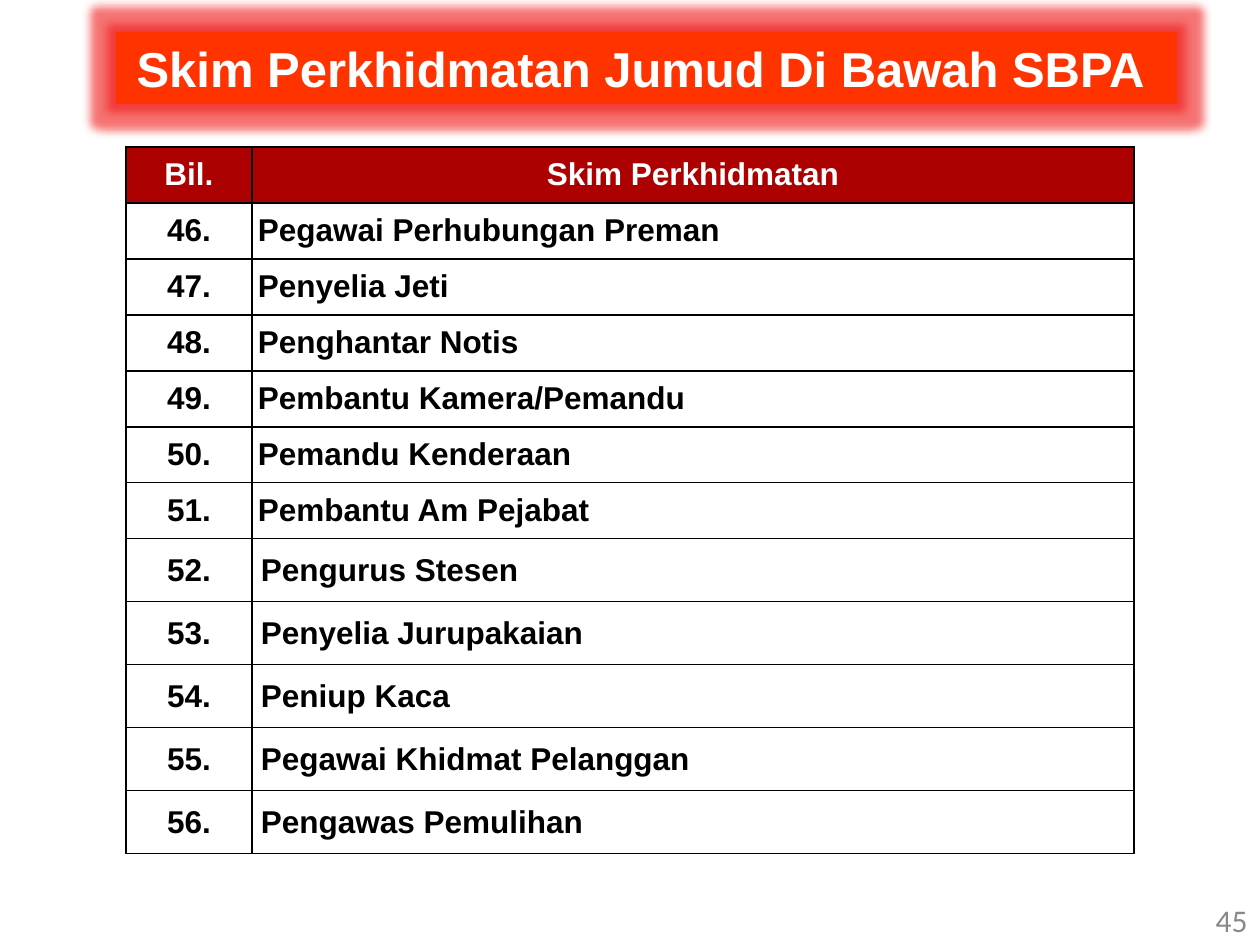
from lxml import etree
from pptx import Presentation
from pptx import util as u
from pptx.dml.color import RGBColor
from pptx.enum import shapes, text
from pptx.oxml import parse_xml
from pptx.oxml.ns import nsdecls, qn

TITLE = "Skim Perkhidmatan Jumud Di Bawah SBPA "
HEADINGS = ("Bil.", "Skim Perkhidmatan")
FIRST_NUMBER = 46
SHORT_ROWS = [
    "Pegawai Perhubungan Preman", "Penyelia Jeti", "Penghantar Notis",
    "Pembantu Kamera/Pemandu", "Pemandu Kenderaan", "Pembantu Am Pejabat",
]
TALL_ROWS = [
    "Pengurus Stesen", "Penyelia Jurupakaian", "Peniup Kaca",
    "Pegawai Khidmat Pelanggan", "Pengawas Pemulihan",
]
PAGE_NUMBER = "45"

PX_PER_INCH = 126
COLUMN_WIDTHS = (126, 882)
SHORT_HEIGHT, TALL_HEIGHT = 56, 63
STANDARD_MARGINS = (13, 6)
SHORT_MARGINS = (6, 9)
TALL_MARGINS = (9, 13)
CENTER, LEFT, RIGHT = text.PP_ALIGN.CENTER, text.PP_ALIGN.LEFT, text.PP_ALIGN.RIGHT


def px(count):
    return u.Emu(round(count * 914400 / PX_PER_INCH))


def color(hex_code):
    return RGBColor.from_string(hex_code)


def write(frame, words, size, hex_code, align, font="Arial", bold=True):
    frame.text = words
    para = frame.paragraphs[0]
    para.alignment = align
    for span in para.runs:
        span.font.name = font
        span.font.size = u.Pt(size)
        span.font.bold = bold
        span.font.color.rgb = color(hex_code)


def add_borders(cell):
    properties = cell._tc.get_or_add_tcPr()
    for index, side in enumerate(("lnL", "lnR", "lnT", "lnB")):
        properties.insert(index, parse_xml(
            f'<a:{side} {nsdecls("a")} w="12700"><a:solidFill>'
            f'<a:srgbClr val="000000"/></a:solidFill></a:{side}>'))


def fill_cell(cell, words, fill, ink, align, margins):
    write(cell.text_frame, words, 18, ink, align)
    cell.vertical_anchor = text.MSO_ANCHOR.MIDDLE
    cell.margin_left = cell.margin_right = px(margins[0])
    cell.margin_top = cell.margin_bottom = px(margins[1])
    cell.fill.solid()
    cell.fill.fore_color.rgb = color(fill)
    add_borders(cell)


def add_scheme_table(page):
    rows = [(name, SHORT_HEIGHT, SHORT_MARGINS) for name in SHORT_ROWS]
    rows += [(name, TALL_HEIGHT, TALL_MARGINS) for name in TALL_ROWS]
    total = SHORT_HEIGHT + sum(height for _, height, _ in rows)
    table = page.shapes.add_table(len(rows) + 1, 2, px(126), px(147),
                                  px(sum(COLUMN_WIDTHS)), px(total)).table
    for column, width in zip(table.columns, COLUMN_WIDTHS):
        column.width = px(width)
    table.rows[0].height = px(SHORT_HEIGHT)
    for index, heading in enumerate(HEADINGS):
        fill_cell(table.cell(0, index), heading, "AD0000", "FFFFFF", CENTER,
                  STANDARD_MARGINS)
    for index, (name, height, margins) in enumerate(rows, start=1):
        table.rows[index].height = px(height)
        number = f"{FIRST_NUMBER + index - 1}."
        fill_cell(table.cell(index, 0), number, "FFFFFF", "000000", CENTER,
                  STANDARD_MARGINS)
        fill_cell(table.cell(index, 1), name, "FFFFFF", "000000", LEFT, margins)


def add_glow(shape, hex_code, radius, opacity):
    effects = shape._element.spPr.find(qn("a:effectLst"))
    glow = etree.SubElement(effects, qn("a:glow"), rad=str(px(radius)))
    tint = etree.SubElement(glow, qn("a:srgbClr"), val=hex_code)
    etree.SubElement(tint, qn("a:alpha"), val=str(opacity * 1000))


def add_title(page):
    banner = page.shapes.add_shape(shapes.MSO_SHAPE.RECTANGLE,
                                   px(116), px(32), px(1061), px(72))
    banner.shadow.inherit = False
    banner.fill.solid()
    banner.fill.fore_color.rgb = color("FF3300")
    banner.line.fill.background()
    add_glow(banner, "F01818", 18, 60)
    frame = banner.text_frame
    frame.word_wrap = True
    frame.vertical_anchor = text.MSO_ANCHOR.MIDDLE
    write(frame, TITLE, 28, "FFFFFF", CENTER)


def add_page_number(page):
    box = page.shapes.add_textbox(px(966), px(895), px(294), px(50))
    box.text_frame.word_wrap = True
    box.text_frame.vertical_anchor = text.MSO_ANCHOR.MIDDLE
    write(box.text_frame, PAGE_NUMBER, 18, "898989", RIGHT, "Calibri", False)


def main():
    deck = Presentation()
    deck.slide_width, deck.slide_height = px(1260), px(945)
    page = deck.slides.add_slide(deck.slide_layouts[6])
    add_scheme_table(page)
    add_title(page)
    add_page_number(page)
    deck.save("out.pptx")


if __name__ == "__main__":
    main()
